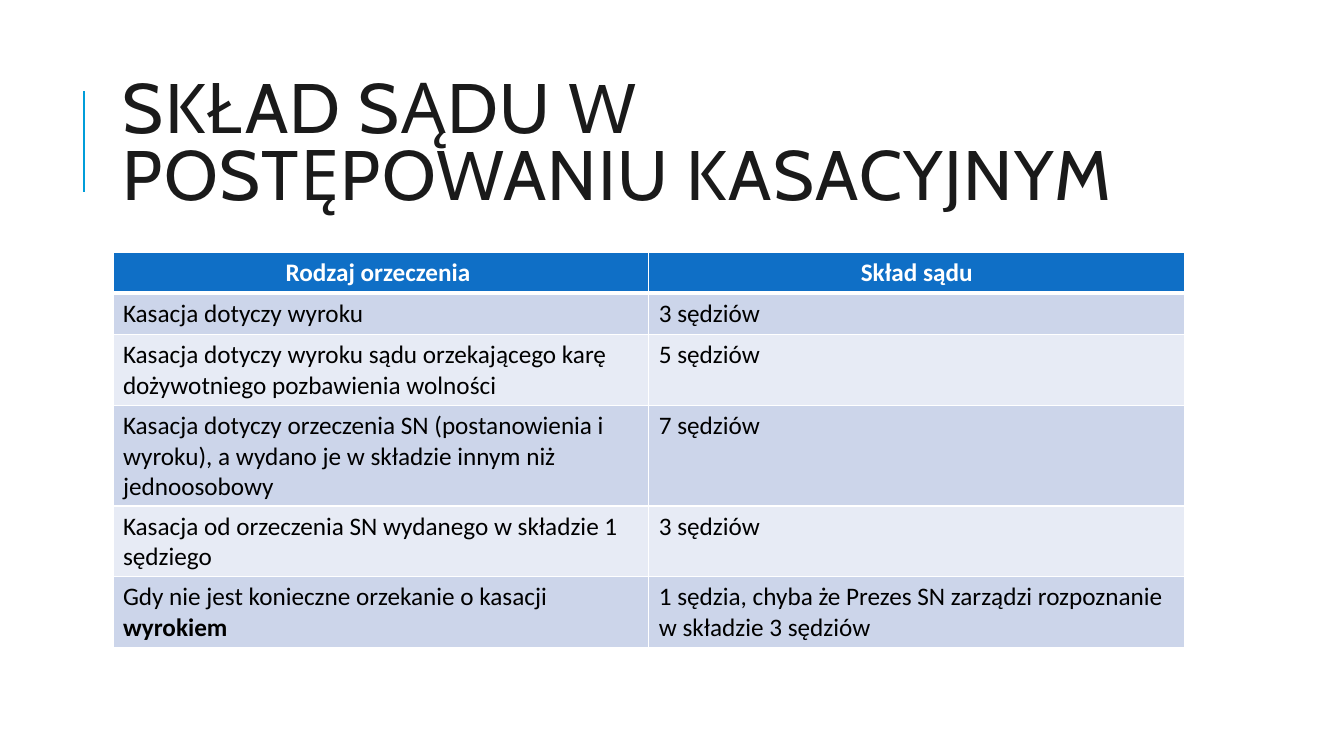
import pptx
import pptx.dml.color
import pptx.enum.shapes
import pptx.enum.text
import pptx.oxml
import pptx.oxml.ns
import pptx.util
from pptx.util import Inches

RGBColor = pptx.dml.color.RGBColor
PP_ALIGN = pptx.enum.text.PP_ALIGN
WHITE = RGBColor(0xFF, 0xFF, 0xFF)
BLACK = RGBColor(0x00, 0x00, 0x00)
INK = RGBColor(0x1A, 0x1A, 0x1A)
ACCENT = RGBColor(0x00, 0x9D, 0xD9)
HEADER = RGBColor(0x0F, 0x6F, 0xC6)
BANDS = (RGBColor(0xE7, 0xEB, 0xF5), RGBColor(0xCC, 0xD5, 0xEA))

ROWS = [
    ("Rodzaj orzeczenia ", "Skład sądu"),
    ("Kasacja dotyczy wyroku", "3 sędziów"),
    ("Kasacja dotyczy wyroku sądu orzekającego karę dożywotniego pozbawienia wolności",
     "5 sędziów"),
    ("Kasacja dotyczy orzeczenia SN (postanowienia i wyroku), a wydano je w składzie "
     "innym niż jednoosobowy", "7 sędziów"),
    ("Kasacja od orzeczenia SN wydanego w składzie 1 sędziego", "3 sędziów"),
    (("Gdy nie jest konieczne orzekanie o kasacji ", "wyrokiem"),
     "1 sędzia, chyba że Prezes SN zarządzi rozpoznanie w składzie 3 sędziów"),
]


class Deck:
    """Hold the presentation style and the current slide."""

    title_font = "Cabin"
    body_font = "Calibri"

    def __init__(self):
        self.prs = pptx.Presentation()
        self.prs.slide_width = Inches(13.33)
        self.prs.slide_height = Inches(7.5)
        self.s = self.prs.slides.add_slide(self.prs.slide_layouts[6])

    def run(self, p, text, font, size, color, bold=False):
        r = p.add_run()
        r.text = text
        r.font.name = font
        r.font.size = pptx.util.Pt(size)
        r.font.bold = bold
        r.font.color.rgb = color
        return r

    def line(self, x1, y1, x2, y2, color, width):
        c = self.s.shapes.add_connector(
            pptx.enum.shapes.MSO_CONNECTOR.STRAIGHT,
            Inches(x1), Inches(y1), Inches(x2), Inches(y2))
        c.line.color.rgb = color
        c.line.width = pptx.util.Pt(width)
        c._element.spPr.append(pptx.oxml.parse_xml(
            f'<a:effectLst {pptx.oxml.ns.nsdecls("a")}/>'))

    def title(self, text, x, y, w, h):
        sp = self.s.shapes.add_textbox(Inches(x), Inches(y), Inches(w), Inches(h))
        tf = sp.text_frame
        tf.word_wrap = True
        tf.vertical_anchor = pptx.enum.text.MSO_ANCHOR.MIDDLE
        p = tf.paragraphs[0]
        p.line_spacing = 0.8
        r = self.run(p, text, self.title_font, 50, INK)
        r._r.get_or_add_rPr().set("spc", "100")

    def borders(self, cell, bottom):
        tcPr = cell._tc.get_or_add_tcPr()
        for i, (side, width) in enumerate(zip("LRTB", (1, 1, 1, bottom))):
            tcPr.insert(i, pptx.oxml.parse_xml(
                f'<a:ln{side} {pptx.oxml.ns.nsdecls("a")} w="{pptx.util.Pt(width)}">'
                f'<a:solidFill><a:srgbClr val="{WHITE}"/></a:solidFill></a:ln{side}>'))

    def table(self, rows, x, y, w, row_h):
        tbl = self.s.shapes.add_table(
            len(rows), len(rows[0]), Inches(x), Inches(y),
            Inches(w), Inches(row_h * len(rows))).table
        for row in tbl.rows:
            row.height = Inches(row_h)
        for i, row in enumerate(rows):
            header = i == 0
            for j, content in enumerate(row):
                cell = tbl.cell(i, j)
                cell.fill.solid()
                cell.fill.fore_color.rgb = HEADER if header else BANDS[i % 2]
                self.borders(cell, 3 if header else 1)
                p = cell.text_frame.paragraphs[0]
                p.alignment = PP_ALIGN.CENTER if header else PP_ALIGN.LEFT
                parts = (content,) if isinstance(content, str) else content
                for k, text in enumerate(parts):
                    self.run(p, text, self.body_font, 18,
                             WHITE if header else BLACK, header or k > 0)


def main():
    deck = Deck()
    deck.line(0.83, 1.9, 0.83, 0.9, ACCENT, 1.5)
    deck.title("SKŁAD SĄDU W POSTĘPOWANIU KASACYJNYM", 1.12, 0.64, 10.63, 1.64)
    deck.table(ROWS, 1.12, 2.5, 10.63, 0.41)
    deck.prs.save("out.pptx")


if __name__ == "__main__":
    main()
